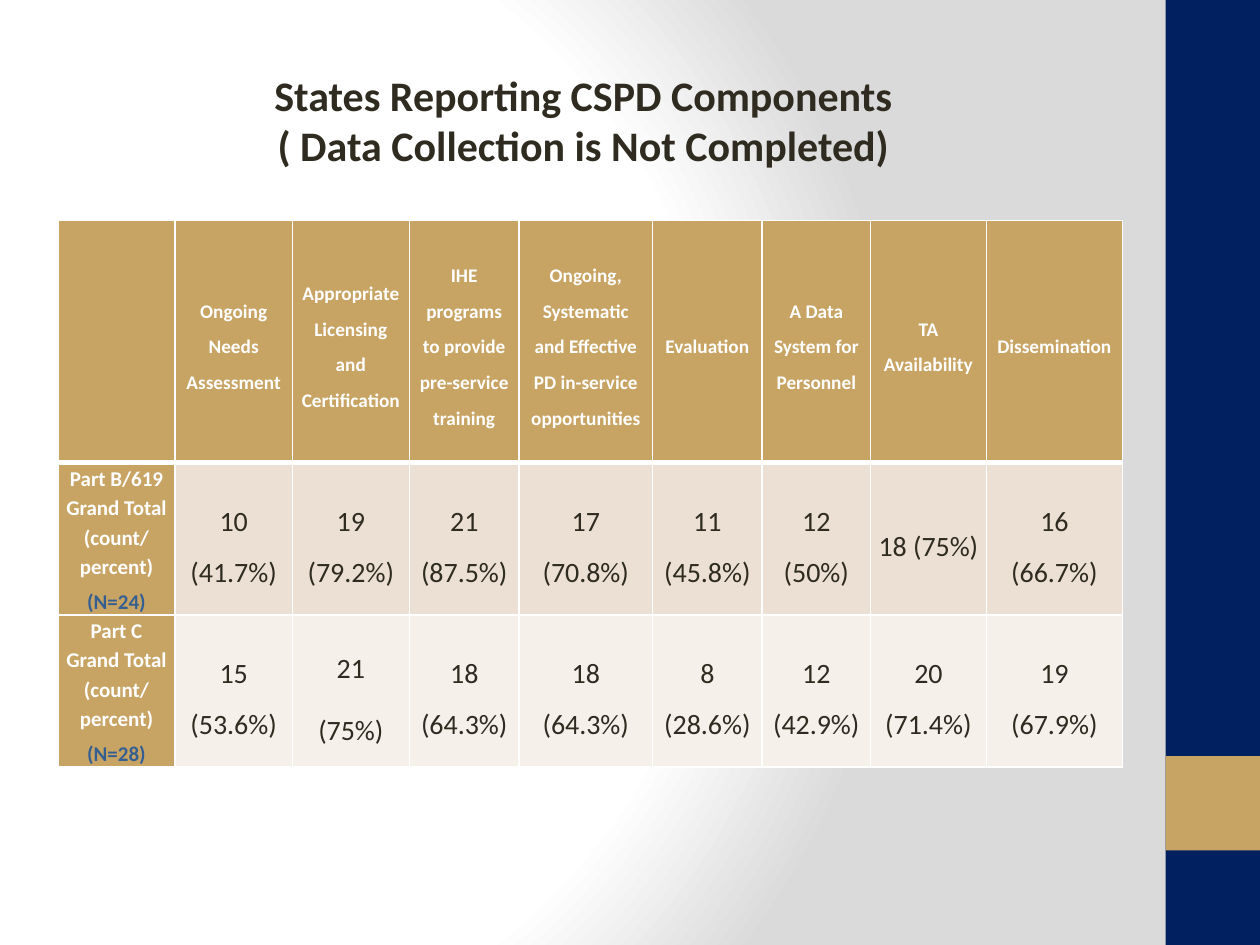
"""Build a slide with a table of states reporting CSPD components."""
from lxml import etree
from pptx import Presentation
from pptx.dml.color import RGBColor
from pptx.enum.shapes import MSO_SHAPE
from pptx.enum.text import MSO_ANCHOR, MSO_AUTO_SIZE, PP_ALIGN
from pptx.oxml import parse_xml
from pptx.util import Inches, Pt

RECTANGLE = MSO_SHAPE.RECTANGLE
TOP, MIDDLE = MSO_ANCHOR.TOP, MSO_ANCHOR.MIDDLE
NO_AUTOFIT = MSO_AUTO_SIZE.NONE
CENTER = PP_ALIGN.CENTER
NAMESPACE = "http://schemas.openxmlformats.org/drawingml/2006/main"
FONT = "Calibri"
COLORS = {
    "navy": "002060", "gold": "C8A464", "ink": "2F2B20", "white": "FFFFFF",
    "gray": "DADADA", "blue": "365F91", "beige": "EBE0D3", "cream": "F5F0EA",
}

TITLE = ["States Reporting CSPD Components", "( Data Collection is Not Completed)"]
HEADERS = [
    "Ongoing Needs Assessment", "Appropriate Licensing and Certification",
    "IHE programs to provide pre-service training",
    "Ongoing, Systematic and Effective PD in-service opportunities",
    "Evaluation", "A Data System for Personnel", "TA Availability", "Dissemination",
]
GROUPS = [
    ("Part B/619", "(N=24)", "beige",
     ["10 (41.7%)", "19 (79.2%)", "21 (87.5%)", "17 (70.8%)",
      "11 (45.8%)", "12 (50%)", "18 (75%)", "16 (66.7%)"]),
    ("Part C", "(N=28)", "cream",
     ["15 (53.6%)", "21\n(75%)", "18 (64.3%)", "18 (64.3%)",
      "8 (28.6%)", "12 (42.9%)", "20 (71.4%)", "19 (67.9%)"]),
]
COLUMN_WIDTHS = [0.93, 0.93, 0.93, 0.87, 1.06, 0.87, 0.86, 0.92, 1.08]
ROW_HEIGHTS = [1.92, 1.16, 1.16]
SIDE_BANDS = [("navy", 0, 7.5), ("gold", 6, 0.75)]


def rgb(name):
    return RGBColor.from_string(COLORS[name])


def add_paragraph(frame, text, size, color, bold, spacing=1.0, before=0, after=0):
    paragraph = frame.paragraphs[0]
    if paragraph.runs:
        paragraph = frame.add_paragraph()
    paragraph.alignment = CENTER
    paragraph.line_spacing = spacing
    paragraph.space_before, paragraph.space_after = Pt(before), Pt(after)
    run = paragraph.add_run()
    run.text = text
    run.font.name, run.font.size, run.font.bold = FONT, Pt(size), bold
    run.font.color.rgb = rgb(color)


def set_background(slide):
    slide.background.fill.solid()
    properties = slide.element.xpath("./p:cSld/p:bg/p:bgPr")[0]
    stops = "".join(
        f'<a:gs pos="{position * 1000}"><a:srgbClr val="{COLORS[color]}"/></a:gs>'
        for position, color in [(0, "white"), (75, "white"), (100, "gray")])
    gradient = parse_xml(
        f'<a:gradFill xmlns:a="{NAMESPACE}" rotWithShape="1"><a:gsLst>{stops}</a:gsLst>'
        '<a:path path="circle"><a:fillToRect l="20000" t="50000" r="100000" b="50000"/>'
        '</a:path></a:gradFill>')
    properties.replace(properties[0], gradient)


def add_side_bands(slide):
    for color, top, height in SIDE_BANDS:
        band = slide.shapes.add_shape(
            RECTANGLE, Inches(9.25), Inches(top), Inches(0.75), Inches(height))
        band.shadow.inherit = False
        band.fill.solid()
        band.fill.fore_color.rgb = rgb(color)
        band.line.fill.background()


def format_title(slide):
    title = slide.shapes.title
    title.left, title.top = Inches(1.17), Inches(0.5)
    title.width, title.height = Inches(6.92), Inches(0.91)
    frame = title.text_frame
    frame.word_wrap, frame.auto_size = True, NO_AUTOFIT
    frame.vertical_anchor = TOP
    for line in TITLE:
        add_paragraph(frame, line, 24, "ink", True)


def style_cell(cell, fill, row_index):
    cell.fill.solid()
    cell.fill.fore_color.rgb = rgb(fill)
    cell.vertical_anchor = MIDDLE
    cell.margin_left = cell.margin_right = Inches(0.06)
    cell.margin_top = cell.margin_bottom = 0
    top, bottom = 3 if row_index == 1 else 1, 3 if row_index == 0 else 1
    properties = cell._tc.get_or_add_tcPr()
    for index, (side, width) in enumerate(zip("LRTB", (1, 1, top, bottom))):
        line = etree.Element(f"{{{NAMESPACE}}}ln{side}", w=str(Pt(width)))
        solid = etree.SubElement(line, f"{{{NAMESPACE}}}solidFill")
        etree.SubElement(solid, f"{{{NAMESPACE}}}srgbClr", val=COLORS["white"])
        properties.insert(index, line)


def add_component_table(slide):
    table = slide.shapes.add_table(
        len(ROW_HEIGHTS), len(COLUMN_WIDTHS), Inches(0.46), Inches(1.75),
        Inches(sum(COLUMN_WIDTHS)), Inches(sum(ROW_HEIGHTS))).table
    for column, width in zip(table.columns, COLUMN_WIDTHS):
        column.width = Inches(width)
    for row, height in zip(table.rows, ROW_HEIGHTS):
        row.height = Inches(height)

    style_cell(table.cell(0, 0), "gold", 0)
    for column_index, header in enumerate(HEADERS, 1):
        cell = table.cell(0, column_index)
        style_cell(cell, "gold", 0)
        add_paragraph(cell.text_frame, header, 11, "white", True, 1.5, 3, 3)

    for row_index, (group, count, fill, values) in enumerate(GROUPS, 1):
        label = table.cell(row_index, 0)
        style_cell(label, "gold", row_index)
        for text, color, before, after in [
                (f"{group} Grand Total (count/", "white", 3, 0),
                ("percent)", "white", 0, 3), (count, "blue", 0, 3)]:
            add_paragraph(label.text_frame, text, 12, color, True, 1.15, before, after)
        for column_index, value in enumerate(values, 1):
            cell = table.cell(row_index, column_index)
            style_cell(cell, fill, row_index)
            for line in value.split("\n"):
                add_paragraph(cell.text_frame, line, 16, "ink", False, 1.5, 3, 3)


def main():
    presentation = Presentation()
    presentation.slide_width, presentation.slide_height = Inches(10), Inches(7.5)
    slide = presentation.slides.add_slide(presentation.slide_layouts[5])
    set_background(slide)
    add_side_bands(slide)
    format_title(slide)
    add_component_table(slide)
    presentation.save("out.pptx")


if __name__ == "__main__":
    main()
